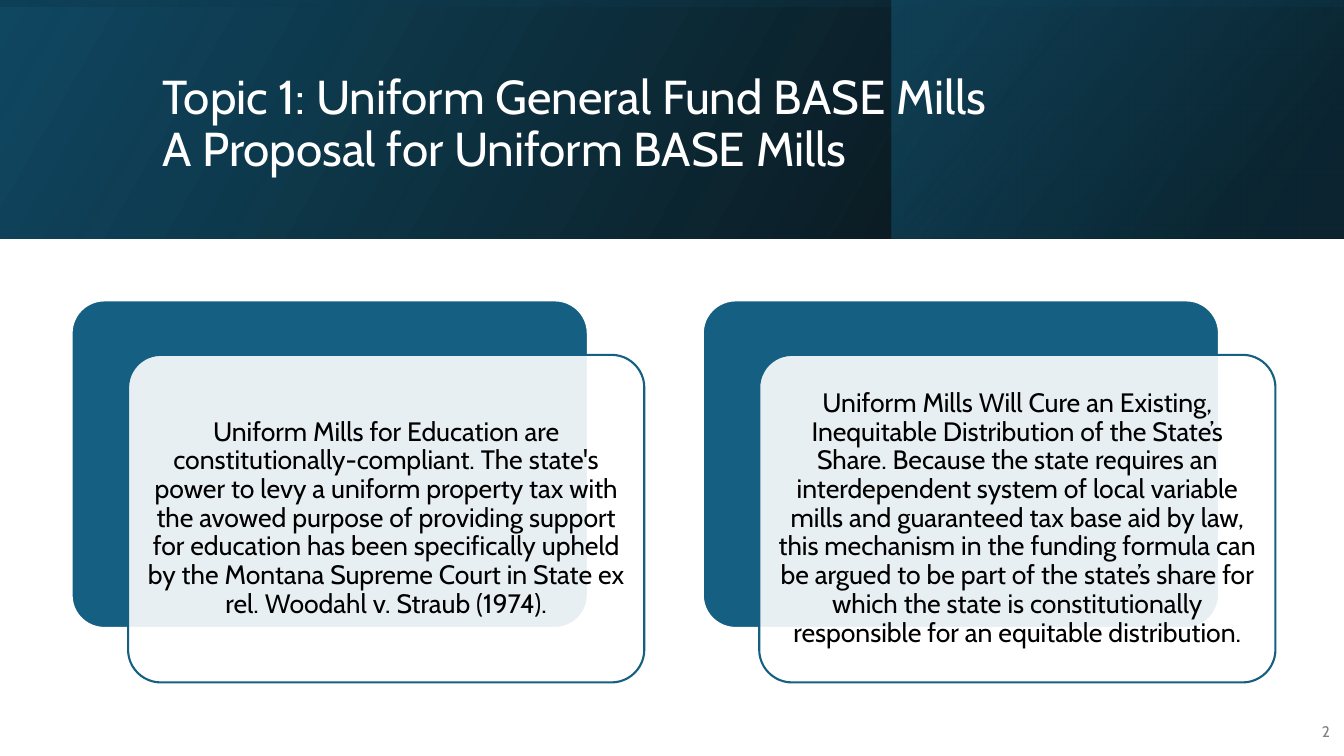
from dataclasses import dataclass

from lxml.etree import SubElement
from pptx import Presentation
from pptx.dml.color import RGBColor
from pptx.enum.shapes import MSO_SHAPE as Shape
from pptx.enum.text import MSO_ANCHOR as Anchor, MSO_AUTO_SIZE as AutoSize, PP_ALIGN as Align
from pptx.oxml.ns import qn
from pptx.util import Pt

PX = 9144  # EMU per px, 100 px to the inch


@dataclass(frozen=True)
class Theme:
    font: str = "Cabin"
    white: str = "FFFFFF"
    black: str = "000000"
    gray: str = "808080"
    teal: str = "156082"
    navy: str = "104862"
    deep: str = "0B3041"
    title_size: int = 34
    card_size: int = 19
    number_size: int = 11
    outline: float = 1.5


class SlideBuilder:
    def __init__(self, slide, theme):
        self.slide = slide
        self.theme = theme

    def block(self, kind, box):
        shape = self.slide.shapes.add_shape(kind, *(v * PX for v in box))
        shape.shadow.inherit = False
        return shape

    def set_alpha(self, shape, percents):
        colors = shape._element.spPr.iter(qn("a:srgbClr"))
        for color, percent in zip(colors, percents):
            SubElement(color, qn("a:alpha")).set("val", str(percent * 1000))

    def gradient_band(self, box, stops, angle, rotation=0):
        """Mirrored rectangle; stops are (position, color, opacity) in percent."""
        band = self.block(Shape.RECTANGLE, box)
        band.rotation = rotation
        band._element.spPr.xfrm.set("flipH", "1")
        band.fill.gradient()
        band.fill.gradient_angle = angle
        for stop, (position, color, _) in zip(band.fill.gradient_stops, stops):
            stop.position = position / 100
            stop.color.rgb = RGBColor.from_string(color)
        self.set_alpha(band, [opacity for _, _, opacity in stops])
        band.line.fill.background()

    def card(self, box, fill, line, opacity=100):
        card = self.block(Shape.ROUNDED_RECTANGLE, box)
        card.adjustments[0] = 0.1
        card.fill.solid()
        card.fill.fore_color.rgb = RGBColor.from_string(fill)
        if opacity < 100:
            self.set_alpha(card, [opacity])
        card.line.color.rgb = RGBColor.from_string(line)
        card.line.width = Pt(self.theme.outline)
        return card

    def add_lines(self, shape, lines, size, color, align, spacing=None, inset=None):
        frame = shape.text_frame
        frame.word_wrap = True
        frame.auto_size = AutoSize.NONE
        frame.vertical_anchor = Anchor.MIDDLE
        if inset is not None:
            frame.margin_left = frame.margin_right = inset * PX
            frame.margin_top = frame.margin_bottom = inset * PX
        paragraph = frame.paragraphs[0]
        paragraph.alignment = align
        paragraph.line_spacing = spacing
        for index, line in enumerate(lines):
            if index:
                paragraph.add_line_break()
            run = paragraph.add_run()
            run.text = line
            run.font.name = self.theme.font
            run.font.size = Pt(size)
            run.font.color.rgb = RGBColor.from_string(color)

    def title(self, box, lines):
        title = self.slide.shapes.title
        title.left, title.top, title.width, title.height = (v * PX for v in box)
        self.slide.shapes._spTree.append(title._element)  # above the bands
        self.add_lines(title, lines, self.theme.title_size, self.theme.white, Align.LEFT, 0.9)

    def layered_card(self, left, top, text):
        theme, width, height = self.theme, 512, 325
        self.card((left, top, width, height), theme.teal, theme.white)
        front = self.card((left + 56, top + 54, width, height), theme.white, theme.teal, 90)
        self.add_lines(front, [text], theme.card_size, theme.black, Align.CENTER, 0.9, 8)

    def page_number(self, box, number):
        page = self.slide.shapes.add_textbox(*(v * PX for v in box))
        self.add_lines(page, [number], self.theme.number_size, self.theme.gray, Align.RIGHT)


CARD_TEXTS = [
    "Uniform Mills for Education are constitutionally-compliant. The state's power to levy "
    "a uniform property tax with the avowed purpose of providing support for education has "
    "been specifically upheld by the Montana Supreme Court in State ex rel. Woodahl v. "
    "Straub (1974).",
    "Uniform Mills Will Cure an Existing, Inequitable Distribution of the State’s Share. "
    "Because the state requires an interdependent system of local variable mills and "
    "guaranteed tax base aid by law, this mechanism in the funding formula can be argued to "
    "be part of the state’s share for which the state is constitutionally responsible for "
    "an equitable distribution.",
]


def main():
    deck = Presentation()
    deck.slide_width, deck.slide_height = 1333 * PX, 750 * PX
    theme = Theme()
    builder = SlideBuilder(deck.slides.add_slide(deck.slide_layouts[5]), theme)

    # Header bands
    builder.gradient_band((0, 0, 1333, 237),
                          [(0, theme.black, 96), (100, theme.navy, 100)], 30)
    builder.gradient_band((884, 0, 449, 237),
                          [(19, theme.deep, 68), (100, theme.teal, 48)], 40)
    builder.gradient_band((548, -548, 237, 1333),
                          [(23, theme.navy, 16), (99, theme.black, 45)], 10, 270)

    # Title and page number
    builder.title((151, 38, 1063, 172), ["Topic 1: Uniform General Fund BASE Mills",
                                         "A Proposal for Uniform BASE Mills"])
    builder.page_number((1280, 706, 49, 40), "2")

    # Argument cards
    for column, argument in enumerate(CARD_TEXTS):
        builder.layered_card(71 + column * 626, 298, argument)

    deck.save("out.pptx")


if __name__ == "__main__":
    main()
